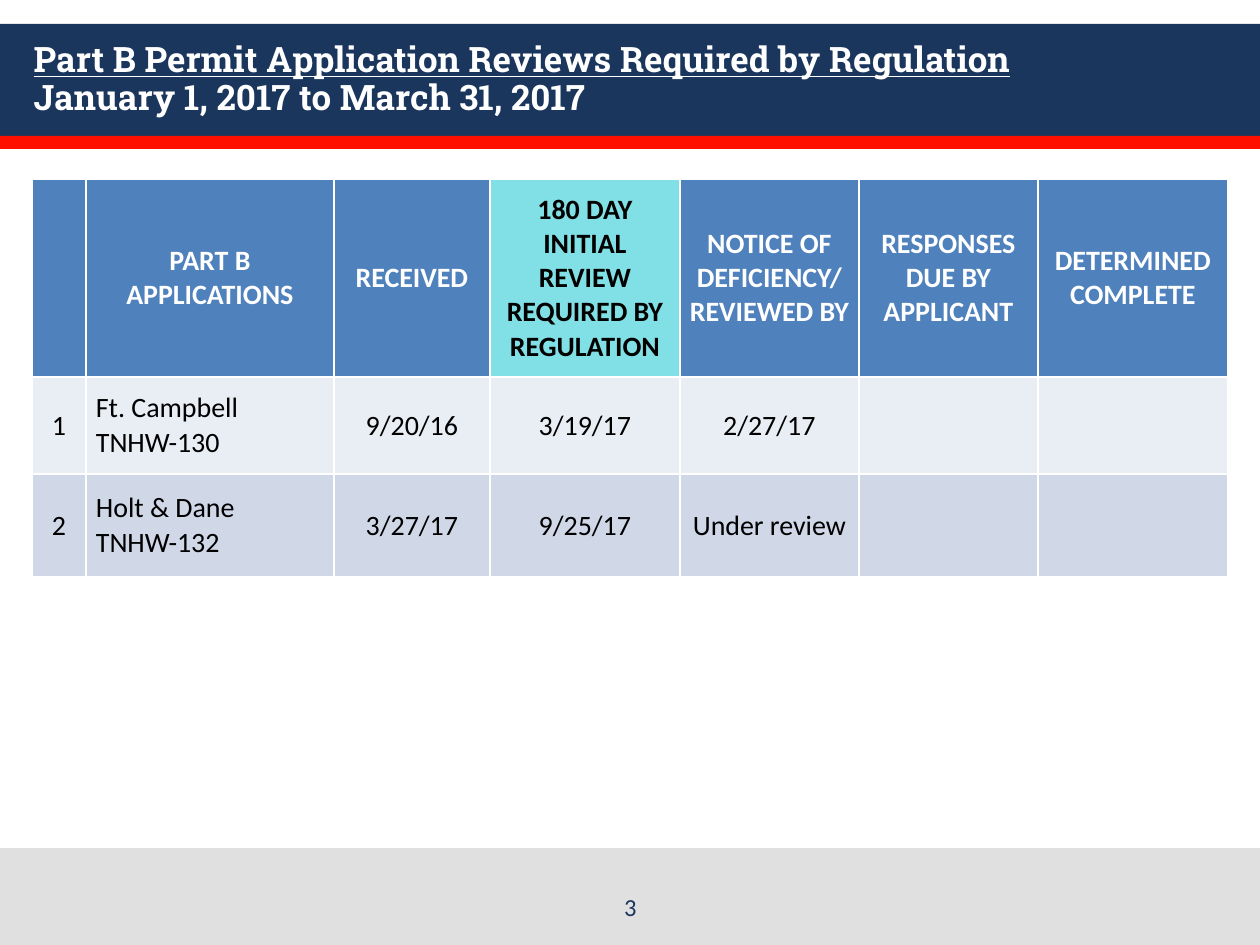
"""Build the slide on Part B permit application reviews."""
from dataclasses import dataclass

from pptx import Presentation
from pptx import util as u
from pptx.dml.color import RGBColor
from pptx.enum import shapes, text


@dataclass(frozen=True)
class Theme:
    navy: str = "1B365D"
    red: str = "FF0F00"
    grey: str = "E0E0E0"
    white: str = "FFFFFF"
    black: str = "000000"
    header: str = "4F81BD"
    highlight: str = "81E0E5"
    bands: tuple = ("E9EDF4", "D0D8E8")
    title_font: str = "Roboto Slab"
    body_font: str = "Calibri"
    title_size: int = 20
    table_size: int = 16
    number_size: int = 14


def px(length):
    return round(length * u.Inches(1) / 126)


def style_font(font, name, size, color, bold=False):
    font.name = name
    font.size = u.Pt(size)
    font.color.rgb = RGBColor.from_string(color)
    font.bold = bold


theme = Theme()
presentation = Presentation()
presentation.slide_width = px(1260)
presentation.slide_height = px(945)
slide = presentation.slides.add_slide(presentation.slide_layouts[5])

bars = [(24, 112, theme.navy), (136, 13, theme.red), (848, 97, theme.grey)]
for top, height, color in bars:
    bar = slide.shapes.add_shape(
        shapes.MSO_SHAPE.RECTANGLE, 0, px(top), px(1260), px(height))
    bar.shadow.inherit = False
    bar.fill.solid()
    bar.fill.fore_color.rgb = RGBColor.from_string(color)
    bar.line.fill.background()

title = slide.shapes.title
slide.shapes._spTree.append(title._element)
title.left, title.top, title.width, title.height = px(21), px(24), px(1218), px(113)
title.text_frame.text = (
    "Part B Permit Application Reviews Required by Regulation\v"
    "January 1, 2017 to March 31, 2017")
title.text_frame.auto_size = text.MSO_AUTO_SIZE.NONE
title.text_frame.vertical_anchor = text.MSO_ANCHOR.MIDDLE
paragraph = title.text_frame.paragraphs[0]
paragraph.alignment = text.PP_ALIGN.LEFT
paragraph.line_spacing = 0.9
for run in paragraph.runs:
    style_font(run.font, theme.title_font, theme.title_size, theme.white, True)
paragraph.runs[0].font.underline = True

rows = [
    ["", "PART B APPLICATIONS", "RECEIVED",
     "180 DAY INITIAL REVIEW\nREQUIRED BY REGULATION",
     "NOTICE OF DEFICIENCY/ REVIEWED BY", "RESPONSES DUE BY APPLICANT",
     "DETERMINED COMPLETE"],
    ["1", "Ft. Campbell TNHW-130", "9/20/16", "3/19/17", "2/27/17", "", ""],
    ["2", "Holt & Dane\nTNHW-132", "3/27/17", "9/25/17", "Under review", "", ""],
]
column_widths = [54, 248, 156, 190, 179, 179, 190]
row_heights = [198, 97, 103]
name_column, deadline_column = 1, 3

table = slide.shapes.add_table(
    len(rows), len(column_widths), px(32), px(179),
    px(sum(column_widths)), px(sum(row_heights))).table
for column, width in zip(table.columns, column_widths):
    column.width = px(width)
for row, height in zip(table.rows, row_heights):
    row.height = px(height)

for row_index, values in enumerate(rows):
    is_header = row_index == 0
    for column_index, value in enumerate(values):
        is_deadline = is_header and column_index == deadline_column
        is_name = not is_header and column_index == name_column
        fill = theme.header if is_header else theme.bands[row_index - 1]
        color = theme.white if is_header and not is_deadline else theme.black
        cell = table.cell(row_index, column_index)
        cell.fill.solid()
        cell.fill.fore_color.rgb = RGBColor.from_string(
            theme.highlight if is_deadline else fill)
        cell.margin_left = cell.margin_right = px(10)
        cell.margin_top = cell.margin_bottom = 0
        cell.vertical_anchor = text.MSO_ANCHOR.MIDDLE
        cell.text_frame.text = value
        for paragraph in cell.text_frame.paragraphs:
            paragraph.alignment = (
                text.PP_ALIGN.LEFT if is_name else text.PP_ALIGN.CENTER)
            for run in paragraph.runs:
                style_font(run.font, theme.body_font, theme.table_size, color, is_header)

number = slide.shapes.add_textbox(px(431), px(878), px(399), px(50))
number.text_frame.word_wrap = True
number.text_frame.vertical_anchor = text.MSO_ANCHOR.BOTTOM
number.text_frame.text = "3"
paragraph = number.text_frame.paragraphs[0]
paragraph.alignment = text.PP_ALIGN.CENTER
style_font(paragraph.runs[0].font, theme.body_font, theme.number_size, theme.navy)

presentation.save("out.pptx")
